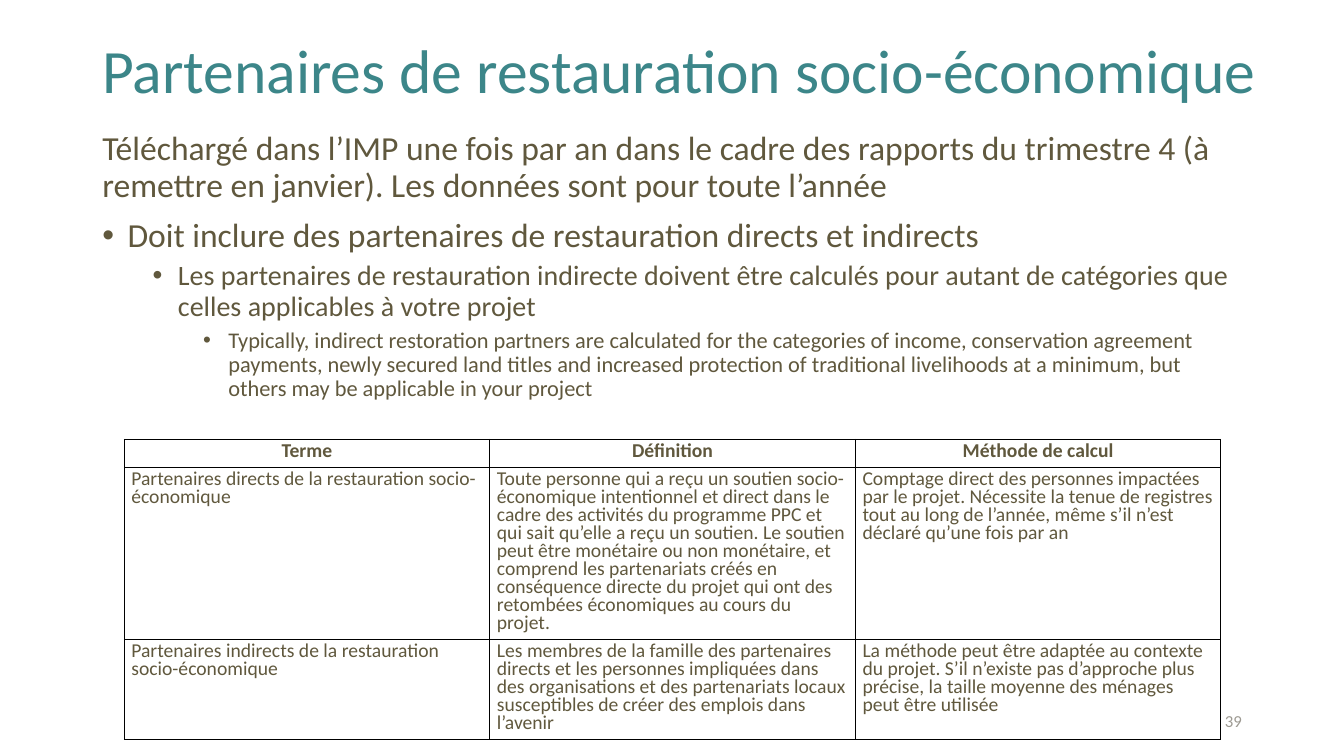
from lxml.etree import SubElement
from pptx import Presentation
from pptx.dml.color import RGBColor
from pptx.enum.text import MSO_ANCHOR as Anchor, PP_ALIGN as Align
from pptx.oxml import parse_xml
from pptx.oxml.ns import nsdecls, qn
from pptx.util import Cm, Pt

TEAL = RGBColor(0x3C, 0x86, 0x89)
OLIVE = RGBColor(0x60, 0x58, 0x3D)
GREY = RGBColor(0x9D, 0x9A, 0x92)
BLACK = RGBColor(0, 0, 0)

TITLE = "Partenaires de restauration socio-économique"

# Text, size, space before, bullet level (None: no bullet)
BODY = [
    ("Téléchargé dans l’IMP une fois par an dans le cadre des rapports du "
     "trimestre 4 (à remettre en janvier). Les données sont pour toute l’année",
     24, 0, None),
    ("Doit inclure des partenaires de restauration directs et indirects",
     24, 10, 0),
    ("Les partenaires de restauration indirecte doivent être calculés pour "
     "autant de catégories que celles applicables à votre projet", 20, 5, 1),
    ("Typically, indirect restoration partners are calculated for the "
     "categories of income, conservation agreement payments, newly secured "
     "land titles and increased protection of traditional livelihoods at a "
     "minimum, but others may be applicable in your project", 16, 5, 2),
]

TERMS = [
    ("Terme", "Définition", "Méthode de calcul"),
    ("Partenaires directs de la restauration socio-économique",
     "Toute personne qui a reçu un soutien socio-économique intentionnel et "
     "direct dans le cadre des activités du programme PPC et qui sait qu’elle "
     "a reçu un soutien. Le soutien peut être monétaire ou non monétaire, et "
     "comprend les partenariats créés en conséquence directe du projet qui ont "
     "des retombées économiques au cours du projet.",
     "Comptage direct des personnes impactées par le projet. Nécessite la "
     "tenue de registres tout au long de l’année, même s’il n’est déclaré "
     "qu’une fois par an"),
    ("Partenaires indirects de la restauration socio-économique",
     "Les membres de la famille des partenaires directs et les personnes "
     "impliquées dans des organisations et des partenariats locaux "
     "susceptibles de créer des emplois dans l’avenir",
     "La méthode peut être adaptée au contexte du projet. S’il n’existe pas "
     "d’approche plus précise, la taille moyenne des ménages peut être "
     "utilisée"),
]
ROW_HEIGHTS = (0.71, 4.33, 2.52)


class PageBuilder:
    """Holds the font and the current slide; lengths are in centimetres."""

    def __init__(self, page, font_name):
        self.page = page
        self.font_name = font_name

    def add_span(self, para, text, size, color, bold=False):
        span = para.add_run()
        span.text = text
        span.font.name = self.font_name
        span.font.size = Pt(size)
        span.font.bold = bold
        span.font.color.rgb = color

    def text_box(self, left, top, width, height, anchor=Anchor.TOP):
        box = self.page.shapes.add_textbox(
            Cm(left), Cm(top), Cm(width), Cm(height))
        frame = box.text_frame
        frame.word_wrap = True
        frame.vertical_anchor = anchor
        return frame

    def line(self, box, text, size, color, align=Align.LEFT):
        para = box.paragraphs[0]
        para.alignment = align
        para.line_spacing = 0.9
        self.add_span(para, text, size, color)

    def outline(self, box, items, color):
        for index, (text, size, before, level) in enumerate(items):
            para = box.add_paragraph() if index else box.paragraphs[0]
            if level is not None:
                self.bullet(para, level)
            para.line_spacing = 0.9
            para.space_before = Pt(before)
            self.add_span(para, text, size, color)

    def bullet(self, para, level):
        para.level = level
        indent = Cm(0.635)
        properties = para._p.get_or_add_pPr()
        properties.set("marL", str(indent + level * Cm(1.27)))
        properties.set("indent", str(-indent))
        SubElement(properties, qn("a:buFont")).set("typeface", "Arial")
        SubElement(properties, qn("a:buChar")).set("char", "•")

    def table(self, left, top, width, heights, rows, size, color):
        frame = self.page.shapes.add_table(
            len(rows), len(rows[0]), Cm(left), Cm(top), Cm(width),
            Cm(sum(heights)))
        grid = frame.table
        grid.first_row = grid.horz_banding = False
        for column in grid.columns:
            column.width = Cm(width / len(rows[0]))
        for row, height in zip(grid.rows, heights):
            row.height = Cm(height)
        for row_index, texts in enumerate(rows):
            header = row_index == 0
            for column_index, text in enumerate(texts):
                cell = grid.cell(row_index, column_index)
                cell.margin_left = cell.margin_right = Cm(0.18)
                cell.margin_top = cell.margin_bottom = Cm(0.13)
                cell.fill.background()
                self.borders(cell)
                para = cell.text_frame.paragraphs[0]
                para.alignment = Align.CENTER if header else Align.LEFT
                para.line_spacing = Pt(12.8)
                self.add_span(para, text, size, color, header)

    def borders(self, cell):
        properties = cell._tc.get_or_add_tcPr()
        for position, side in enumerate("LRTB"):
            properties.insert(position, parse_xml(
                f'<a:ln{side} {nsdecls("a")} w="{Pt(0.75)}"><a:solidFill>'
                f'<a:srgbClr val="{BLACK}"/></a:solidFill></a:ln{side}>'))


def main():
    deck = Presentation()
    deck.slide_width, deck.slide_height = Cm(33.87), Cm(19.05)
    page = deck.slides.add_slide(deck.slide_layouts[6])
    builder = PageBuilder(page, "Calibri")

    # Title
    title = builder.text_box(2.33, 0, 30.3, 3.73, Anchor.MIDDLE)
    builder.line(title, TITLE, 44, TEAL)

    # Reporting rules
    rules = builder.text_box(2.33, 3.2, 29.21, 12.09)
    builder.outline(rules, BODY, OLIVE)

    # Page number
    number = builder.text_box(23.93, 17.68, 7.62, 1.02, Anchor.MIDDLE)
    builder.line(number, "39", 12, GREY, Align.RIGHT)

    # Definitions
    builder.table(3.13, 11.07, 27.64, ROW_HEIGHTS, TERMS, 14, OLIVE)

    deck.save("out.pptx")


if __name__ == "__main__":
    main()
